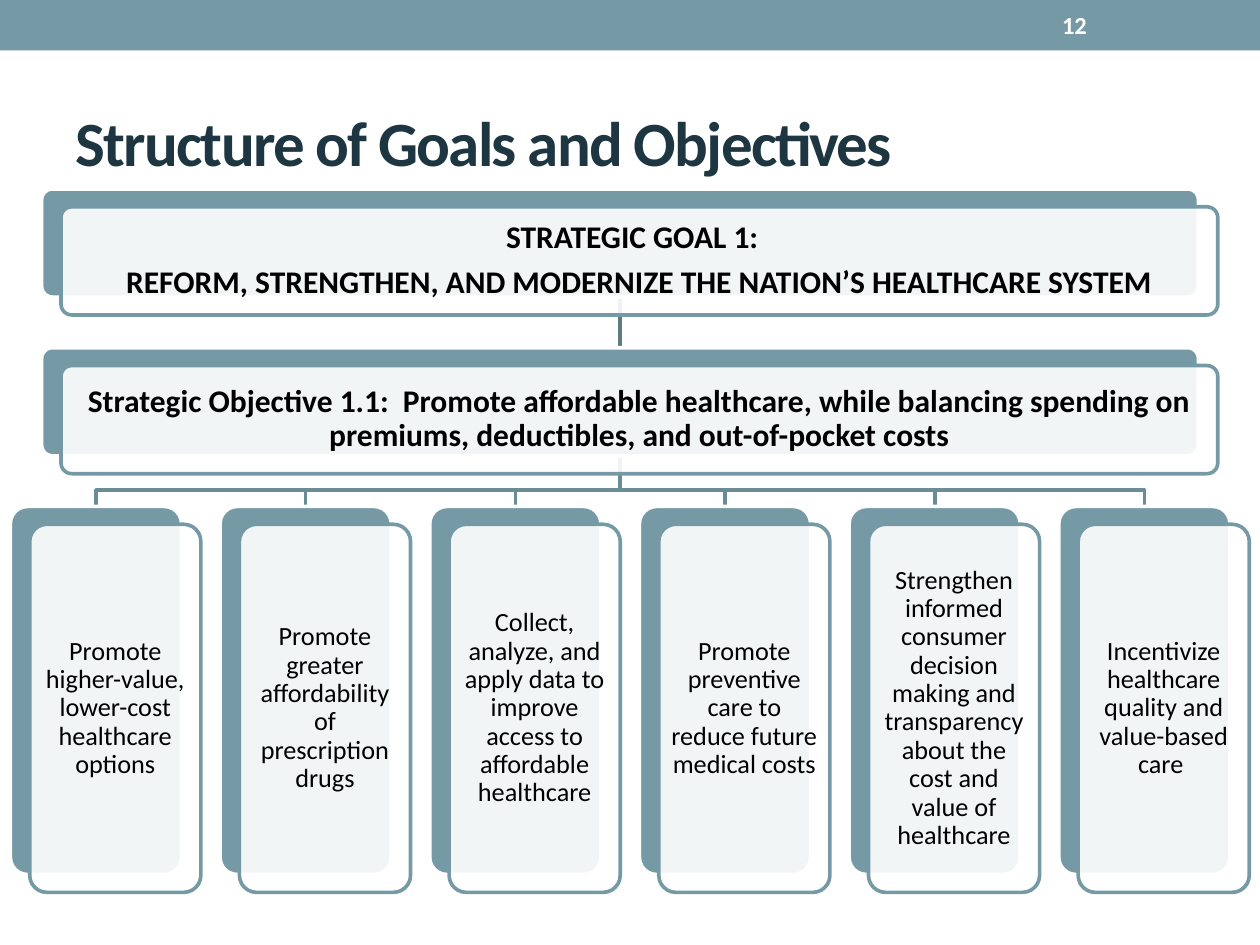
from lxml.etree import SubElement
from pptx import Presentation
from pptx.dml.color import RGBColor
from pptx.enum.shapes import MSO_CONNECTOR, MSO_SHAPE
from pptx.enum.text import MSO_ANCHOR, PP_ALIGN
from pptx.oxml.ns import qn
from pptx.util import Cm, Pt

COLORS = {
    "teal": "759AA5",
    "branch": "6A8C96",
    "trunk": "5E7B84",
    "title": "1D3641",
    "white": "FFFFFF",
    "black": "000000",
}
LINE_WIDTH = Pt(2.08)

goal = ["STRATEGIC GOAL 1:  ",
        "REFORM, STRENGTHEN, AND MODERNIZE THE NATION’S HEALTHCARE SYSTEM"]
objective = ["Strategic Objective 1.1:  Promote affordable healthcare, while balancing "
             "spending on premiums, deductibles, and out-of-pocket costs"]
strategies = [
    "Promote higher-value, lower-cost healthcare options",
    "Promote greater affordability of prescription drugs",
    "Collect, analyze, and apply data to improve access to affordable healthcare",
    "Promote preventive care to reduce future medical costs",
    "Strengthen informed consumer decision making and transparency about the cost "
    "and value of healthcare",
    "Incentivize healthcare quality and value-based care ",
]

banner_left, banner_width, banner_height = 0.84, 23.32, 2.18
goal_top, objective_top, card_top = 3.81, 7.01, 10.21
card_left, card_step, card_width, card_height = 0.21, 4.227, 3.45, 7.42
trunk_x = banner_left + banner_width / 2
branch_y = 9.88


def style_text(paragraph, size, color, bold):
    for run in paragraph.runs:
        run.font.name = "Calibri"
        run.font.size = Pt(size)
        run.font.bold = bold
        run.font.color.rgb = RGBColor.from_string(COLORS[color])


def add_layered_card(left, top, width, height, lines, size, bold, inset):
    """Draw a teal rounded card with a translucent white text card offset over it."""
    for offset_x, offset_y, fill, line in ((0, 0, "teal", "white"),
                                           (0.39, 0.36, "white", "teal")):
        card = slide.shapes.add_shape(MSO_SHAPE.ROUNDED_RECTANGLE, Cm(left + offset_x),
                                      Cm(top + offset_y), Cm(width), Cm(height))
        card.adjustments[0] = 0.1
        card.shadow.inherit = False
        card.fill.solid()
        card.fill.fore_color.rgb = RGBColor.from_string(COLORS[fill])
        card.line.color.rgb = RGBColor.from_string(COLORS[line])
        card.line.width = LINE_WIDTH

    # The front card lets a tenth of the back card through
    front_color = card._element.spPr.find(qn("a:solidFill")).find(qn("a:srgbClr"))
    SubElement(front_color, qn("a:alpha"), val="90000")

    frame = card.text_frame
    frame.word_wrap = True
    frame.vertical_anchor = MSO_ANCHOR.MIDDLE
    frame.margin_left = frame.margin_right = Cm(inset)
    frame.margin_top = frame.margin_bottom = Cm(inset)
    frame.text = "\n".join(lines)
    for paragraph in frame.paragraphs:
        paragraph.alignment = PP_ALIGN.CENTER
        paragraph.line_spacing = 0.9
        paragraph.space_after = Pt(size * 0.35)
        style_text(paragraph, size, "black", bold)


prs = Presentation()
prs.slide_width, prs.slide_height = Cm(25.4), Cm(19.05)
slide = prs.slides.add_slide(prs.slide_layouts[6])

# Header band
header = slide.shapes.add_shape(MSO_SHAPE.RECTANGLE, 0, 0, prs.slide_width, Cm(1.02))
header.shadow.inherit = False
header.fill.solid()
header.fill.fore_color.rgb = RGBColor.from_string(COLORS["teal"])
header.line.fill.background()

# Title and slide number
for text, left, top, width, height, size, color in (
        ("Structure of Goals and Objectives", 1.27, 1.47, 22.86, 2.74, 36, "title"),
        ("12", 21.16, 0.05, 2.97, 0.91, 14, "white")):
    label = slide.shapes.add_textbox(Cm(left), Cm(top), Cm(width), Cm(height)).text_frame
    label.word_wrap = True
    label.vertical_anchor = MSO_ANCHOR.MIDDLE
    label.text = text
    style_text(label.paragraphs[0], size, color, True)
    if color == "title":
        label.paragraphs[0].runs[0]._r.get_or_add_rPr().set("spc", "-100")

# Branches from the objective to each strategy
objective_bottom = objective_top + banner_height
for column in range(len(strategies)):
    card_center = card_left + column * card_step + card_width / 2
    builder = slide.shapes.build_freeform(Cm(trunk_x), Cm(objective_bottom))
    builder.add_line_segments([(Cm(trunk_x), Cm(branch_y)),
                               (Cm(card_center), Cm(branch_y)),
                               (Cm(card_center), Cm(card_top))], close=False)
    branch = builder.convert_to_shape()
    branch.shadow.inherit = False
    branch.fill.background()
    branch.line.color.rgb = RGBColor.from_string(COLORS["branch"])
    branch.line.width = LINE_WIDTH

# Trunk from the goal to the objective
trunk = slide.shapes.add_connector(MSO_CONNECTOR.STRAIGHT, Cm(trunk_x),
                                   Cm(goal_top + banner_height),
                                   Cm(trunk_x), Cm(objective_top))
trunk.line.color.rgb = RGBColor.from_string(COLORS["trunk"])
trunk.line.width = LINE_WIDTH
SubElement(trunk._element.spPr, qn("a:effectLst"))

# Goal and objective banners, then the row of strategies
for top, lines in ((goal_top, goal), (objective_top, objective)):
    add_layered_card(banner_left, top, banner_width, banner_height, lines, 18, True, 0.18)
for column, strategy in enumerate(strategies):
    add_layered_card(card_left + column * card_step, card_top, card_width, card_height,
                     [strategy], 15, False, 0.15)

prs.save("out.pptx")
